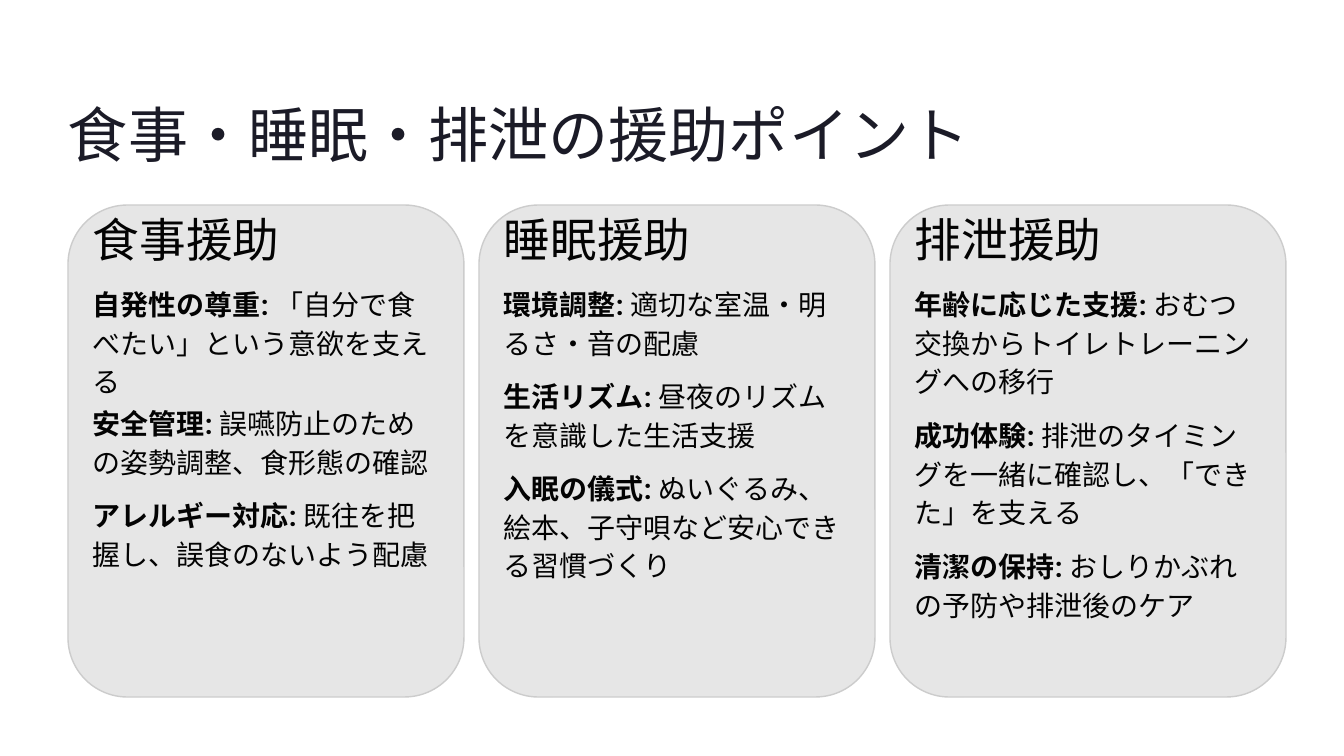
from pptx import Presentation
from pptx.dml.color import RGBColor
from pptx.enum.shapes import MSO_SHAPE
from pptx.enum.text import MSO_ANCHOR, MSO_AUTO_SIZE, PP_ALIGN
from pptx.util import Pt

TITLE = "食事・睡眠・排泄の援助ポイント"
CARDS = [
    ("食事援助", [
        (283, 2, "自発性の尊重:", " 「自分で食べたい」という意欲を支える"),
        (402, 2, "安全管理:", " 誤嚥防止のための姿勢調整、食形態の確認"),
        (494, 2, "アレルギー対応:", " 既往を把握し、誤食のないよう配慮"),
    ]),
    ("睡眠援助", [
        (283, 2, "環境調整:", " 適切な室温・明るさ・音の配慮"),
        (375, 2, "生活リズム:", " 昼夜のリズムを意識した生活支援"),
        (467, 3, "入眠の儀式:", " ぬいぐるみ、絵本、子守唄など安心できる習慣づくり"),
    ]),
    ("排泄援助", [
        (283, 3, "年齢に応じた支援:", " おむつ交換からトイレトレーニングへの移行"),
        (414, 3, "成功体験:", " 排泄のタイミングを一緒に確認し、「できた」を支える"),
        (545, 2, "清潔の保持:", " おしりかぶれの予防や排泄後のケア"),
    ]),
]
COLORS = {"title": "1B1B27", "text": "030303", "card": "E6E6E6", "border": "CCCCCC"}
FONTS = {
    "title": {"name": "Inter", "size": Pt(51.5), "bold": False},
    "heading": {"name": "Inter", "size": Pt(40), "bold": False},
    "label": {"name": "Roboto", "size": Pt(24), "bold": True},
    "detail": {"name": "Roboto", "size": Pt(24), "bold": False},
}
FRAME = {
    "margin_left": 0, "margin_top": 0, "margin_right": 0, "margin_bottom": 0,
    "word_wrap": True, "auto_size": MSO_AUTO_SIZE.NONE, "vertical_anchor": MSO_ANCHOR.TOP,
}
CARD_LEFT, CARD_TOP, CARD_WIDTH, CARD_HEIGHT = 68, 205, 396, 492
CARD_PITCH = 411
TEXT_INSET = 25
LINE_HEIGHT = 43
EMU_PER_PX = 914400 / 84


def px(*lengths):
    return [round(length * EMU_PER_PX) for length in lengths]


def color(name):
    return RGBColor.from_string(COLORS[name])


def set_all(target, values):
    for name, value in values.items():
        setattr(target, name, value)


def write(box, line_spacing, ink, spans):
    set_all(box.text_frame, FRAME)
    para = box.text_frame.paragraphs[0]
    set_all(para, {"alignment": PP_ALIGN.LEFT, "line_spacing": Pt(line_spacing)})
    for style, text in spans:
        span = para.add_run()
        span.text = text
        set_all(span.font, FONTS[style])
        span.font.color.rgb = color(ink)


def add_text(page, bounds, line_spacing, spans):
    write(page.shapes.add_textbox(*px(*bounds)), line_spacing, "text", spans)


def add_card(page, left, heading, points):
    card = page.shapes.add_shape(
        MSO_SHAPE.ROUNDED_RECTANGLE, *px(left, CARD_TOP, CARD_WIDTH, CARD_HEIGHT))
    card.adjustments[0] = 0.15
    card.shadow.inherit = False
    card.fill.solid()
    card.fill.fore_color.rgb = color("card")
    card.line.color.rgb = color("border")
    card.line.width = Pt(1.2)
    text_left = left + TEXT_INSET
    add_text(page, (text_left, 230, 311, 42), 32, [("heading", heading)])
    for top, lines, label, detail in points:
        add_text(page, (text_left, top, 344, lines * LINE_HEIGHT), 33,
                 [("label", label), ("detail", detail)])


def main():
    deck = Presentation()
    deck.slide_width, deck.slide_height = px(1344, 756)
    page = deck.slides.add_slide(deck.slide_layouts[5])
    title = page.shapes.title
    set_all(title, dict(zip(("left", "top", "width", "height"), px(68, 94, 910, 76))))
    write(title, 64.5, "title", [("title", TITLE)])
    for index, (heading, points) in enumerate(CARDS):
        add_card(page, CARD_LEFT + index * CARD_PITCH, heading, points)
    deck.save("out.pptx")


if __name__ == "__main__":
    main()
